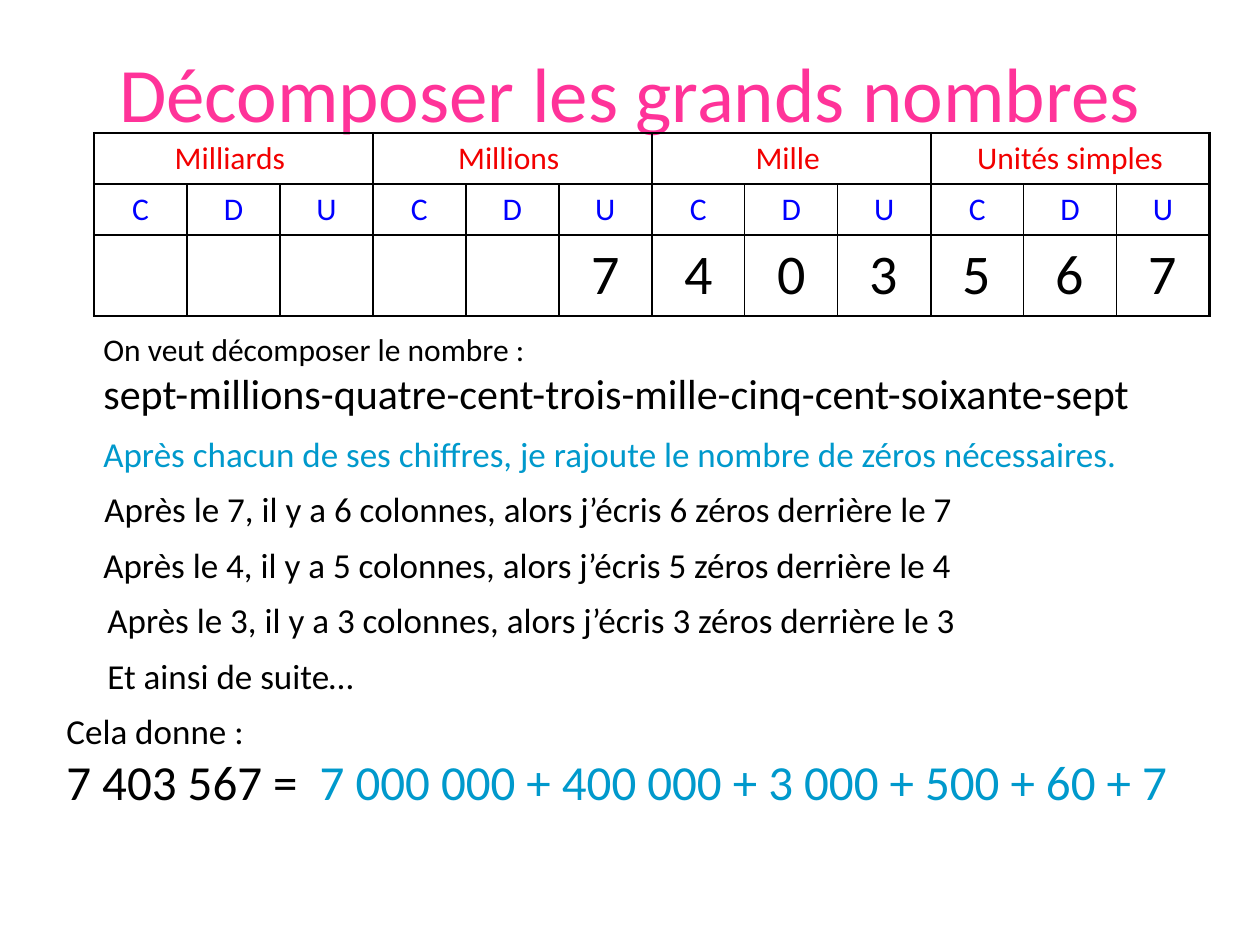
from dataclasses import dataclass

from lxml.etree import SubElement
from pptx import Presentation
from pptx.dml.color import RGBColor
from pptx.enum.text import MSO_ANCHOR, MSO_AUTO_SIZE, PP_ALIGN
from pptx.oxml.ns import qn
from pptx.util import Emu, Pt

PX_PER_INCH = 126


@dataclass(frozen=True)
class Theme:
    font: str = "Calibri"
    title: str = "FF3399"
    period: str = "F20000"
    rank: str = "0000FF"
    ink: str = "000000"
    accent: str = "0099CC"
    title_size: int = 44
    digit_size: int = 32
    result_size: int = 28
    number_size: int = 24
    step_size: int = 20
    label_size: int = 18
    thick: float = 1.5
    thin: float = 1


THEME = Theme()
PERIODS = ["Milliards ", "Millions ", "Mille ", "Unités simples"]
RANKS = "CDU"
NUMBER = "7403567"


def px(length):
    return Emu(round(length * 914400 / PX_PER_INCH))


def style(font, size, color):
    font.name = THEME.font
    font.size = Pt(size)
    font.color.rgb = RGBColor.from_string(color)


def place(shape, left, top, width, height):
    shape.left, shape.top = px(left), px(top)
    shape.width, shape.height = px(width), px(height)


def add_title(slide, wording):
    title = slide.shapes.title
    place(title, 63, 38, 1134, 107)
    title.text_frame.auto_size = MSO_AUTO_SIZE.NONE
    title.text_frame.vertical_anchor = MSO_ANCHOR.MIDDLE
    heading = title.text_frame.paragraphs[0]
    heading.text = wording
    heading.alignment = PP_ALIGN.CENTER
    style(heading.font, THEME.title_size, THEME.title)


def add_note(slide, left, top, width, height, lines):
    frame = slide.shapes.add_textbox(px(left), px(top), px(width), px(height)).text_frame
    frame.word_wrap = True
    frame.auto_size = MSO_AUTO_SIZE.SHAPE_TO_FIT_TEXT
    for index, (wording, size, color) in enumerate(lines):
        line = frame.paragraphs[0] if index == 0 else frame.add_paragraph()
        line.text = wording
        style(line.font, size, color)
    return frame


def set_borders(cell, **weights):
    properties = cell._tc.get_or_add_tcPr()
    for side in "LRTB":
        border = SubElement(properties, qn(f"a:ln{side}"), w=str(Pt(weights[side])))
        fill = SubElement(border, qn("a:solidFill"))
        SubElement(fill, qn("a:srgbClr"), val=THEME.ink)


def fill_cell(cell, wording, size, color, anchor):
    cell.fill.background()
    cell.vertical_anchor = anchor
    entry = cell.text_frame.paragraphs[0]
    entry.text = wording
    entry.alignment = PP_ALIGN.CENTER
    style(entry.font, size, color)


def add_place_value_table(slide):
    group = len(RANKS)
    columns = group * len(PERIODS)
    row_heights = [51, 51, 81]
    column_width = 93
    table = slide.shapes.add_table(
        len(row_heights), columns, px(94), px(133),
        px(columns * column_width), px(sum(row_heights)),
    ).table
    table.first_row = table.horz_banding = False
    for row, height in zip(table.rows, row_heights):
        row.height = px(height)
    for column in table.columns:
        column.width = px(column_width)

    digits = NUMBER.rjust(columns)
    for index in range(columns):
        period, rank = divmod(index, group)
        starts, ends = rank == 0, rank == group - 1
        period_cell, rank_cell, digit_cell = (table.cell(row, index) for row in range(3))
        for cell in (period_cell, rank_cell, digit_cell):
            is_period = cell is period_cell
            set_borders(
                cell,
                L=THEME.thick if starts else THEME.thin,
                R=THEME.thick if ends or (is_period and starts) else THEME.thin,
                T=THEME.thick if is_period else THEME.thin,
                B=THEME.thick if cell is digit_cell else THEME.thin,
            )
        fill_cell(period_cell, PERIODS[period] if starts else "",
                  THEME.label_size, THEME.period, MSO_ANCHOR.TOP)
        fill_cell(rank_cell, RANKS[rank], THEME.label_size, THEME.rank, MSO_ANCHOR.MIDDLE)
        fill_cell(digit_cell, digits[index].strip(),
                  THEME.digit_size, THEME.ink, MSO_ANCHOR.MIDDLE)
    for start in range(0, columns, group):
        table.cell(0, start).merge(table.cell(0, start + group - 1))


def add_steps(slide):
    def zeros_step(digit, count):
        return (f"Après le {digit}, il y a {count} colonnes, "
                f"alors j’écris {count} zéros derrière le {digit}")

    steps = [
        (91, "Après chacun de ses chiffres, je rajoute le nombre de zéros nécessaires.",
         THEME.accent),
        (92, zeros_step(7, 6), THEME.ink),
        (91, zeros_step(4, 5), THEME.ink),
        (95, zeros_step(3, 3), THEME.ink),
        (95, "Et ainsi de suite…", THEME.ink),
    ]
    for index, (left, wording, color) in enumerate(steps):
        top = 426 + index * 111 // 2
        add_note(slide, left, top, 1111, 55, [(wording, THEME.step_size, color)])


def add_result(slide):
    frame = add_note(slide, 54, 703, 1150, 115, [
        ("Cela donne :", THEME.step_size, THEME.ink),
        ("7 403 567 =  ", THEME.result_size, THEME.ink),
    ])
    decomposition = frame.paragraphs[-1].add_run()
    decomposition.text = "7 000 000 + 400 000 + 3 000 + 500 + 60 + 7"
    decomposition.font.color.rgb = RGBColor.from_string(THEME.accent)


def main():
    deck = Presentation()
    deck.slide_width, deck.slide_height = px(1260), px(945)
    slide = deck.slides.add_slide(deck.slide_layouts.get_by_name("Title Only"))
    add_title(slide, "Décomposer les grands nombres")
    add_place_value_table(slide)
    add_note(slide, 91, 324, 1115, 102, [
        ("On veut décomposer le nombre :", THEME.label_size, THEME.ink),
        ("sept-millions-quatre-cent-trois-mille-cinq-cent-soixante-sept",
         THEME.number_size, THEME.ink),
    ])
    add_steps(slide)
    add_result(slide)
    deck.save("out.pptx")


if __name__ == "__main__":
    main()
